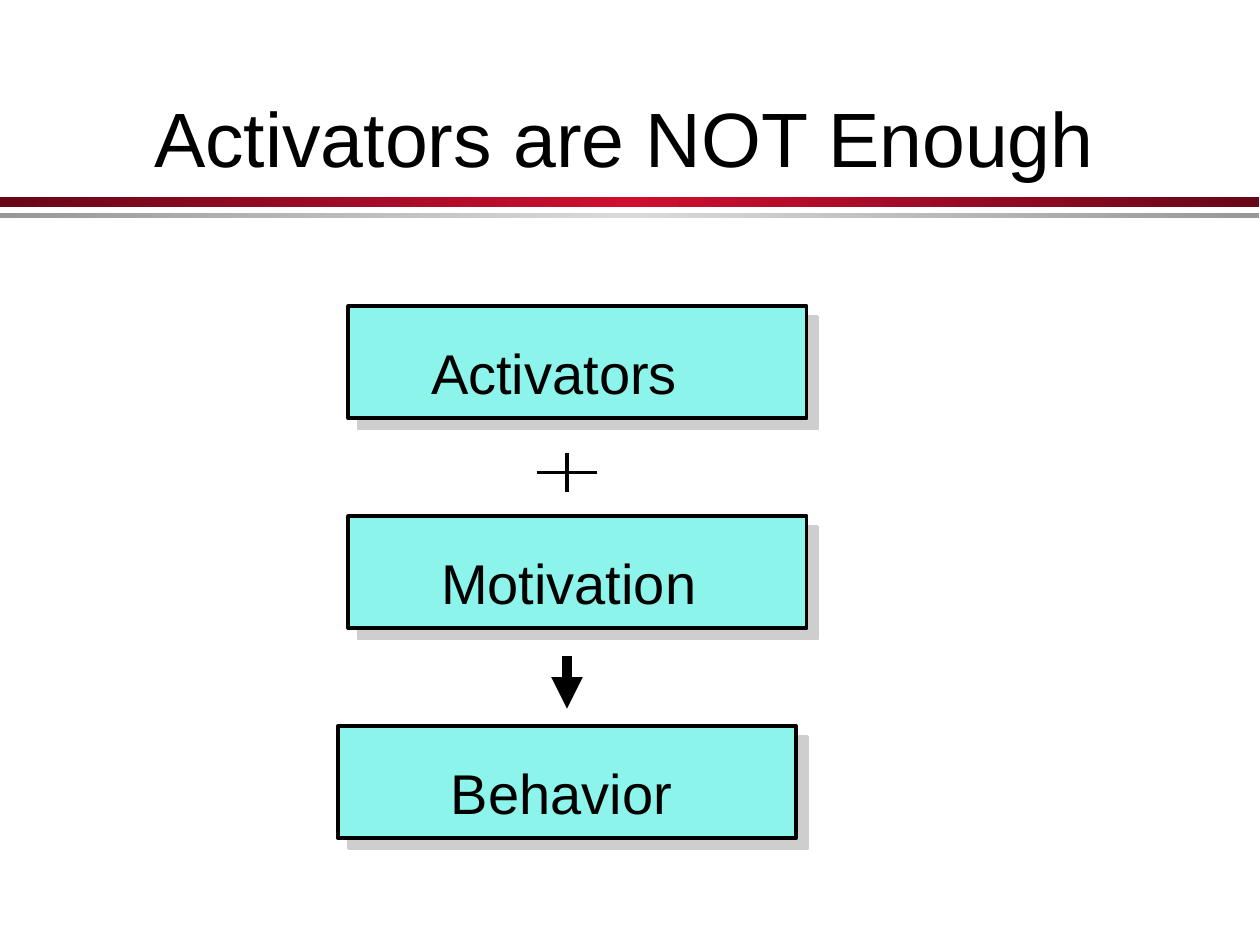
from copy import deepcopy

from lxml.etree import SubElement
from pptx import Presentation
from pptx.dml.color import RGBColor
from pptx.enum.shapes import MSO_CONNECTOR, MSO_SHAPE
from pptx.enum.text import MSO_ANCHOR, MSO_AUTO_SIZE, PP_ALIGN
from pptx.oxml.ns import qn
from pptx.util import Pt

COLORS = {
    "text": "000000",
    "line": "000000",
    "box": "8CF4EA",
    "shadow": "CECECE",
    "red_edge": "670718",
    "red_mid": "CF0E30",
    "gray_edge": "989898",
    "gray_mid": "DADADA",
}
FONT = "Arial"


def rgb(name):
    return RGBColor.from_string(COLORS[name])


def add_run(p, text, size):
    r = p.add_run()
    r.text = text
    r.font.name = FONT
    r.font.size = Pt(size)
    r.font.color.rgb = rgb("text")


def add_rect(s, x, y, w, h):
    sp = s.shapes.add_shape(MSO_SHAPE.RECTANGLE, Pt(x), Pt(y), Pt(w), Pt(h))
    sp.shadow.inherit = False
    return sp


def add_band(s, x, y, w, h, edge, mid):
    sp = add_rect(s, x, y, w, h)
    sp.line.fill.background()
    sp.fill.gradient()
    sp.fill.gradient_angle = 0
    stops = sp._element.spPr.find(".//" + qn("a:gsLst"))
    stops.append(deepcopy(stops[0]))
    for stop, pos, color in zip(sp.fill.gradient_stops, (0, 0.5, 1), (edge, mid, edge)):
        stop.position = pos
        stop.color.rgb = rgb(color)


def add_title(s, x, y, w, h, text):
    sp = s.shapes.title
    sp.left, sp.top, sp.width, sp.height = Pt(x), Pt(y), Pt(w), Pt(h)
    tf = sp.text_frame
    tf.vertical_anchor = MSO_ANCHOR.BOTTOM
    p = tf.paragraphs[0]
    p.alignment = PP_ALIGN.CENTER
    add_run(p, text, 44)


def add_box(s, x, y, w, h, text, label_dx, label_w):
    sp = add_rect(s, x, y, w, h)
    sp.fill.solid()
    sp.fill.fore_color.rgb = rgb("box")
    sp.line.color.rgb = rgb("line")
    sp.line.width = Pt(2)
    effects = sp._element.spPr.find(qn("a:effectLst"))
    shadow = SubElement(effects, qn("a:outerShdw"), blurRad="0", dist=str(Pt(8.5)),
                        dir="2700000", algn="ctr", rotWithShape="0")
    SubElement(shadow, qn("a:srgbClr"), val=COLORS["shadow"])

    label = s.shapes.add_textbox(Pt(x + label_dx), Pt(y + 15), Pt(label_w), Pt(46))
    tf = label.text_frame
    tf.word_wrap = False
    tf.auto_size = MSO_AUTO_SIZE.SHAPE_TO_FIT_TEXT
    add_run(tf.paragraphs[0], text, 32)


def add_line(s, x1, y1, x2, y2, width):
    line = s.shapes.add_connector(MSO_CONNECTOR.STRAIGHT, Pt(x1), Pt(y1), Pt(x2), Pt(y2))
    line.line.color.rgb = rgb("line")
    line.line.width = Pt(width)
    SubElement(line._element.spPr, qn("a:effectLst"))
    return line


def add_plus(s, x, y, w, h):
    add_line(s, x + w / 2, y, x + w / 2, y + h, 2)
    add_line(s, x, y + h / 2, x + w, y + h / 2, 2)


def add_down_arrow(s, x, y, h):
    arrow = add_line(s, x, y, x, y + h, 6)
    SubElement(arrow.line._get_or_add_ln(), qn("a:tailEnd"), type="triangle")


def add_equation(s, x, y, w, pitch):
    box_h = 64
    steps = [
        ("Activators", 0, 40.3, 156),
        ("Motivation", 0, 46, 161),
        ("Behavior", -6, 57.6, 142),
    ]
    for i, (text, shift, label_dx, label_w) in enumerate(steps):
        add_box(s, x + shift, y + i * pitch, w, box_h, text, label_dx, label_w)
    axis = x + w / 2 - 6
    add_plus(s, axis - 17, y + box_h + 20, 34, 22)
    add_down_arrow(s, axis, y + pitch + box_h + 16, 30)


def main():
    prs = Presentation()
    prs.slide_width, prs.slide_height = Pt(720), Pt(540)
    s = prs.slides.add_slide(prs.slide_layouts[5])
    add_band(s, 0, 112.5, 719.5, 6, "red_edge", "red_mid")
    add_band(s, 0, 121.5, 719.5, 3, "gray_edge", "gray_mid")
    add_title(s, 48, 18, 618, 90, "Activators are NOT Enough")
    add_equation(s, 199, 175, 262, 120)
    prs.save("out.pptx")


if __name__ == "__main__":
    main()
